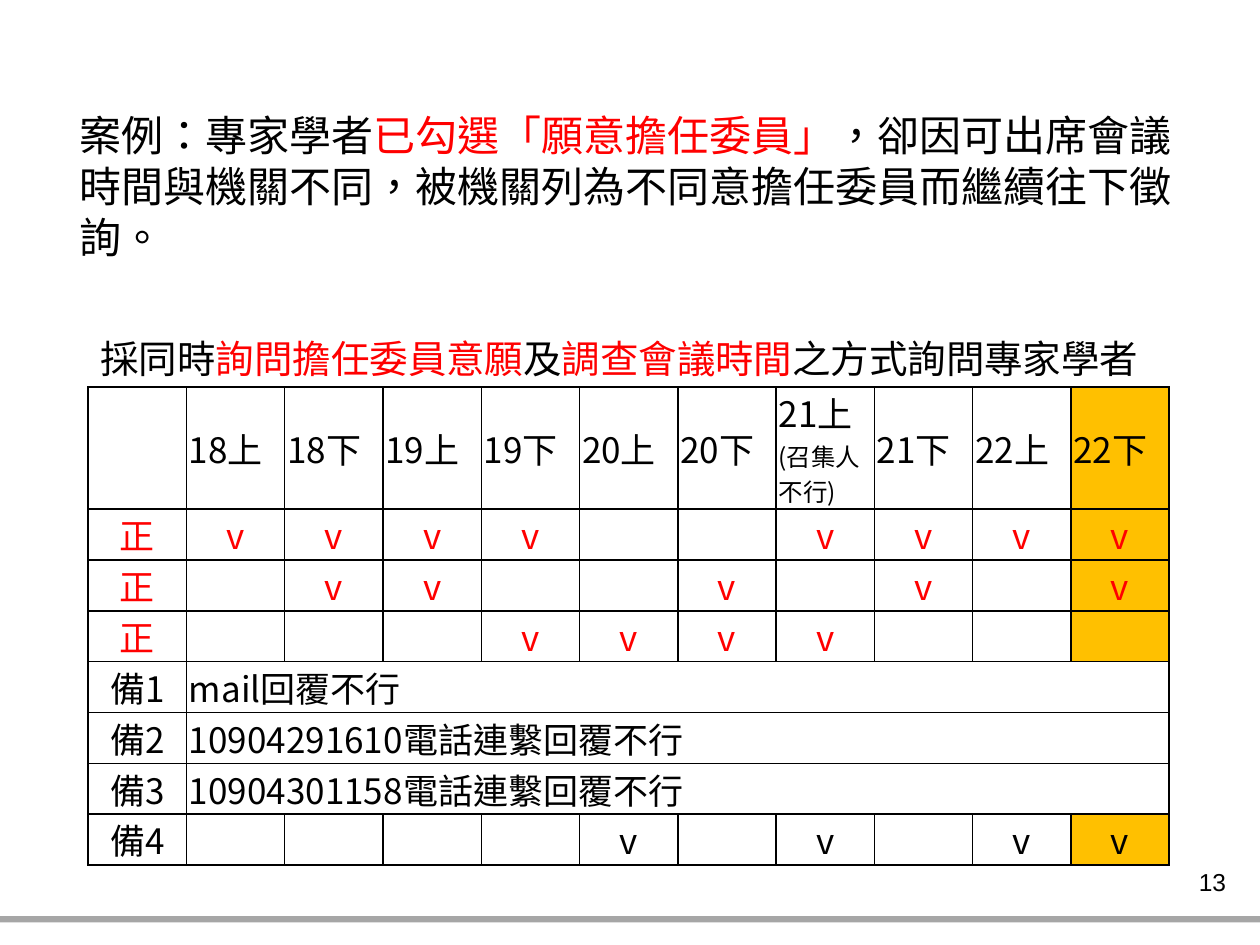
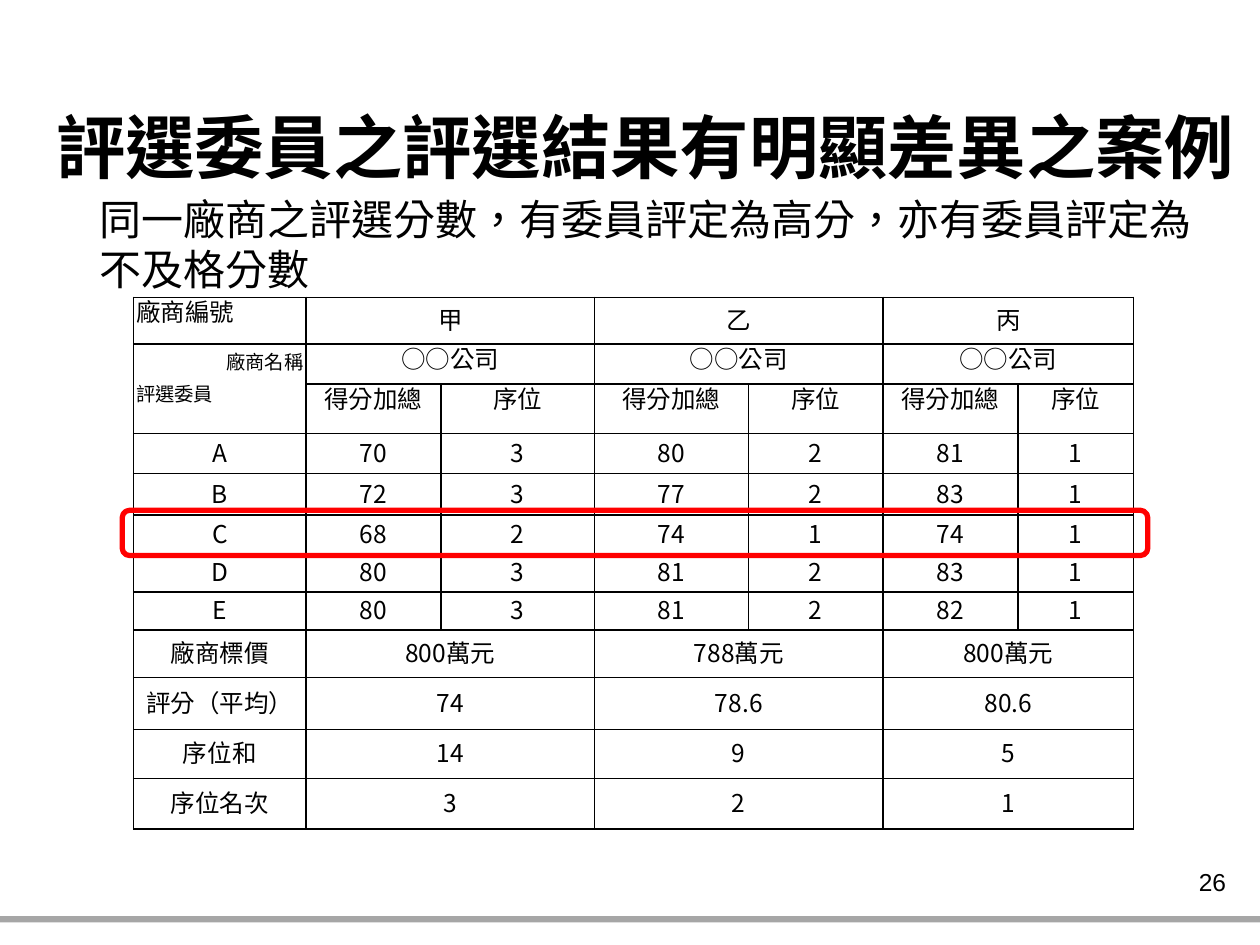
from dataclasses import dataclass
from itertools import groupby
from typing import Any, NamedTuple

from lxml import etree
from pptx import Presentation
from pptx.dml.color import RGBColor
from pptx.enum.shapes import MSO_SHAPE
from pptx.enum.text import MSO_ANCHOR, MSO_AUTO_SIZE, PP_ALIGN
from pptx.oxml.ns import qn
from pptx.util import Inches, Pt

BLACK = RGBColor(0x00, 0x00, 0x00)
RED = RGBColor(0xFF, 0x00, 0x00)
GOLD = RGBColor(0xFF, 0xC0, 0x00)
GRAY = RGBColor(0xA6, 0xA6, 0xA6)

LEFT, CENTER, RIGHT = PP_ALIGN.LEFT, PP_ALIGN.CENTER, PP_ALIGN.RIGHT
TOP, MIDDLE = MSO_ANCHOR.TOP, MSO_ANCHOR.MIDDLE
RECT, ROUND = MSO_SHAPE.RECTANGLE, MSO_SHAPE.ROUNDED_RECTANGLE
NO_FIT = MSO_AUTO_SIZE.NONE

SANS, HAN, SERIF, PLAIN = ("Noto Sans CJK SC", "Noto Sans CJK TC",
                           "Times New Roman", "Arial")
TITLE_ONLY = 5


class Box(NamedTuple):
    left: float
    top: float
    width: float
    height: float


class Part(NamedTuple):
    text: str
    color: RGBColor = BLACK


@dataclass(frozen=True)
class Style:
    size: float
    align: Any = LEFT
    latin: str = SANS
    cjk: str = SANS  # latin typeface named on runs of Chinese text
    bold: bool = False
    pitch: float | None = None  # exact line height in points


# Text styles
HEAD = Style(39.6, CENTER, bold=True)
LEAD = Style(24, pitch=29)
NOTE = Style(22, pitch=26.5)
PAGE = Style(14, RIGHT, PLAIN)
DAY = Style(20)
MARK = Style(20, CENTER)
SMALL = Style(14)
SCORE = Style(14, CENTER, cjk=SERIF, pitch=18)
LABEL = Style(14, LEFT, cjk=SERIF, pitch=18)
NAMES = Style(11, RIGHT, cjk=SERIF, pitch=18)
JUDGES = Style(11, LEFT, cjk=SERIF, pitch=18)


def put(item: Any, **values: Any) -> None:
    for name, value in values.items():
        setattr(item, name, value)


def place(box: Box) -> tuple:
    return tuple(Inches(side) for side in box)


def write(para: Any, parts: list[Part], style: Style) -> None:
    """Fill a paragraph, giving Latin and Chinese runs their own typeface."""
    put(para, alignment=style.align, space_before=Pt(0),
        line_spacing=Pt(style.pitch) if style.pitch else 1.0)
    for text, color in parts:
        for ascii_run, chars in groupby(text, str.isascii):
            run = para.add_run()
            run.text = "".join(chars)
            put(run.font, size=Pt(style.size), bold=style.bold,
                name=style.latin if ascii_run else style.cjk)
            run.font.color.rgb = color
            props = run._r.get_or_add_rPr()
            props.set("lang", "zh-TW")
            etree.SubElement(props, qn("a:ea")).set("typeface", HAN)


def set_text(shape: Any, parts: list[Part], style: Style, anchor: Any = TOP) -> None:
    frame = shape.text_frame
    put(frame, word_wrap=True, auto_size=NO_FIT, vertical_anchor=anchor)
    write(frame.paragraphs[0], parts, style)


def add_text(slide: Any, box: Box, parts: list[Part], style: Style) -> None:
    set_text(slide.shapes.add_textbox(*place(box)), parts, style)


def set_title(slide: Any, box: Box, parts: list[Part], style: Style,
              anchor: Any) -> None:
    title = slide.shapes.title
    put(title, **dict(zip(("left", "top", "width", "height"), place(box))))
    set_text(title, parts, style, anchor)


def add_slide(deck: Any, number: int) -> Any:
    """Start a slide with the shared footer band and page number."""
    slide = deck.slides.add_slide(deck.slide_layouts[TITLE_ONLY])
    band = slide.shapes.add_shape(RECT, *place(Box(-0.01, 7.27, 10.02, 0.05)))
    band.shadow.inherit = False
    band.fill.solid()
    band.fill.fore_color.rgb = GRAY
    band.line.fill.background()
    add_text(slide, Box(7.5, 6.83, 2.33, 0.52), [Part(str(number))], PAGE)
    return slide


# Tables
def add_grid(slide: Any, box: Box, cols: list[float], rows: list[float]) -> Any:
    """Add a table with thin black borders, tight margins and no fill."""
    table = slide.shapes.add_table(len(rows), len(cols), *place(box)).table
    put(table, first_row=False, horz_banding=False)
    for col, width in zip(table.columns, cols):
        col.width = Inches(width)
    for row, height in zip(table.rows, rows):
        row.height = Inches(height)
    for cell in table.iter_cells():
        put(cell, margin_left=Inches(0.02), margin_right=Inches(0.02),
            margin_top=0, margin_bottom=0, vertical_anchor=MIDDLE)
        props = cell._tc.get_or_add_tcPr()
        for side in ("a:lnL", "a:lnR", "a:lnT", "a:lnB"):
            line = etree.SubElement(props, qn(side), w=str(Pt(1)))
            fill = etree.SubElement(line, qn("a:solidFill"))
            etree.SubElement(fill, qn("a:srgbClr"), val=str(BLACK))
        cell.fill.background()
    return table


def fill_cell(cell: Any, text: str, style: Style, color: RGBColor = BLACK) -> None:
    write(cell.text_frame.paragraphs[0], [Part(text, color)], style)


def add_line(cell: Any, text: str, style: Style) -> None:
    write(cell.text_frame.add_paragraph(), [Part(text)], style)


# Slide content
DAYS = [f"{day}{half}" for day in range(18, 23) for half in "上下"]
BUSY = "21上"
VOTES = [
    ("正", "1111001111", RED),
    ("正", "0110010101", RED),
    ("正", "0001111000", RED),
    ("備1", "mail回覆不行", BLACK),
    ("備2", "10904291610電話連繫回覆不行", BLACK),
    ("備3", "10904301158電話連繫回覆不行", BLACK),
    ("備4", "0000101011", BLACK),
]

FIRMS = ["甲", "乙", "丙"]
SCORES = [
    ("A", 70, 3, 80, 2, 81, 1),
    ("B", 72, 3, 77, 2, 83, 1),
    ("C", 68, 2, 74, 1, 74, 1),
    ("D", 80, 3, 81, 2, 83, 1),
    ("E", 80, 3, 81, 2, 82, 1),
]
TOTALS = [
    ("廠商標價", "800萬元", "788萬元", "800萬元"),
    ("評分（平均）", "74", "78.6", "80.6"),
    ("序位和", "14", "9", "5"),
    ("序位名次", "3", "2", "1"),
]


def is_marks(text: str) -> bool:
    return set(text) <= set("01")


def draw_dates(slide: Any) -> None:
    last = len(DAYS)
    table = add_grid(slide, Box(0.7, 3.07, 8.58, 3.5), [0.78] * (last + 1),
                     [0.97] + [0.4] * len(VOTES))
    for col, day in enumerate(DAYS, 1):
        cell = table.cell(0, col)
        fill_cell(cell, day, DAY)
        if day == BUSY:
            add_line(cell, "(召集人不行)", SMALL)
    gold = [table.cell(0, last)]
    for row, (name, reply, color) in enumerate(VOTES, 1):
        fill_cell(table.cell(row, 0), name, MARK, color)
        if not is_marks(reply):
            table.cell(row, 1).merge(table.cell(row, last))
            fill_cell(table.cell(row, 1), reply, DAY)
            continue
        gold.append(table.cell(row, last))
        for col, flag in enumerate(reply, 1):
            if flag == "1":
                fill_cell(table.cell(row, col), "v", MARK, color)
    for cell in gold:
        cell.fill.solid()
        cell.fill.fore_color.rgb = GOLD


def fill_pairs(table: Any, row: int, texts: Any) -> None:
    """Write one text over each firm's pair of columns."""
    for index, text in enumerate(texts):
        col = 1 + 2 * index
        table.cell(row, col).merge(table.cell(row, col + 1))
        fill_cell(table.cell(row, col), text, SCORE)


def draw_scores(slide: Any) -> None:
    table = add_grid(
        slide, Box(1.06, 2.36, 7.94, 4.21),
        [1.37, 1.07, 1.22, 1.22, 1.07, 1.07, 0.92],
        [0.37, 0.32, 0.39, 0.32, 0.33, 0.31, 0.3, 0.3, 0.38, 0.41, 0.39, 0.4])

    # Header rows
    corner = table.cell(1, 0)
    corner.merge(table.cell(2, 0))
    fill_cell(table.cell(0, 0), "廠商編號", LABEL)
    fill_cell(corner, "廠商名稱", NAMES)
    add_line(corner, "評選委員", JUDGES)
    fill_pairs(table, 0, FIRMS)
    fill_pairs(table, 1, ["○○公司"] * len(FIRMS))
    for col, text in enumerate(["得分加總", "序位"] * len(FIRMS), 1):
        fill_cell(table.cell(2, col), text, SCORE)
    table.cell(0, 0).vertical_anchor = TOP
    for row in (1, 2):
        for cell in table.rows[row].cells:
            cell.vertical_anchor = TOP

    # Scores and totals
    for row, values in enumerate(SCORES, 3):
        for col, value in enumerate(values):
            fill_cell(table.cell(row, col), str(value), SCORE)
    for row, (name, *values) in enumerate(TOTALS, 3 + len(SCORES)):
        fill_cell(table.cell(row, 0), name, SCORE)
        fill_pairs(table, row, values)


def main() -> None:
    deck = Presentation()
    put(deck, slide_width=Inches(10), slide_height=Inches(7.5))

    # Case of the meeting dates
    slide = add_slide(deck, 13)
    set_title(slide, Box(0.53, 0.82, 8.93, 1.31), [
        Part("案例：專家學者"),
        Part("已勾選「願意擔任委員」", RED),
        Part("，卻因可出席會議時間與機關不同，被機關列為不同意擔任委員而繼續往下徵詢。"),
    ], LEAD, TOP)
    add_text(slide, Box(0.7, 2.61, 8.58, 0.47), [
        Part("採同時"),
        Part("詢問擔任委員意願", RED),
        Part("及"),
        Part("調查會議時間", RED),
        Part("之方式詢問專家學者"),
    ], NOTE)
    draw_dates(slide)

    # Case of the diverging scores
    slide = add_slide(deck, 26)
    set_title(slide, Box(0.24, 0.69, 9.76, 0.94),
              [Part("評選委員之評選結果有明顯差異之案例")], HEAD, MIDDLE)
    add_text(slide, Box(0.69, 1.48, 9.04, 0.91),
             [Part("同一廠商之評選分數，有委員評定為高分，亦有委員評定為不及格分數")], LEAD)
    draw_scores(slide)
    frame = slide.shapes.add_shape(ROUND, *place(Box(0.97, 4.05, 8.14, 0.36)))
    frame.shadow.inherit = False
    frame.fill.background()
    frame.line.color.rgb = RED
    frame.line.width = Pt(3)

    deck.save("out.pptx")


if __name__ == "__main__":
    main()
